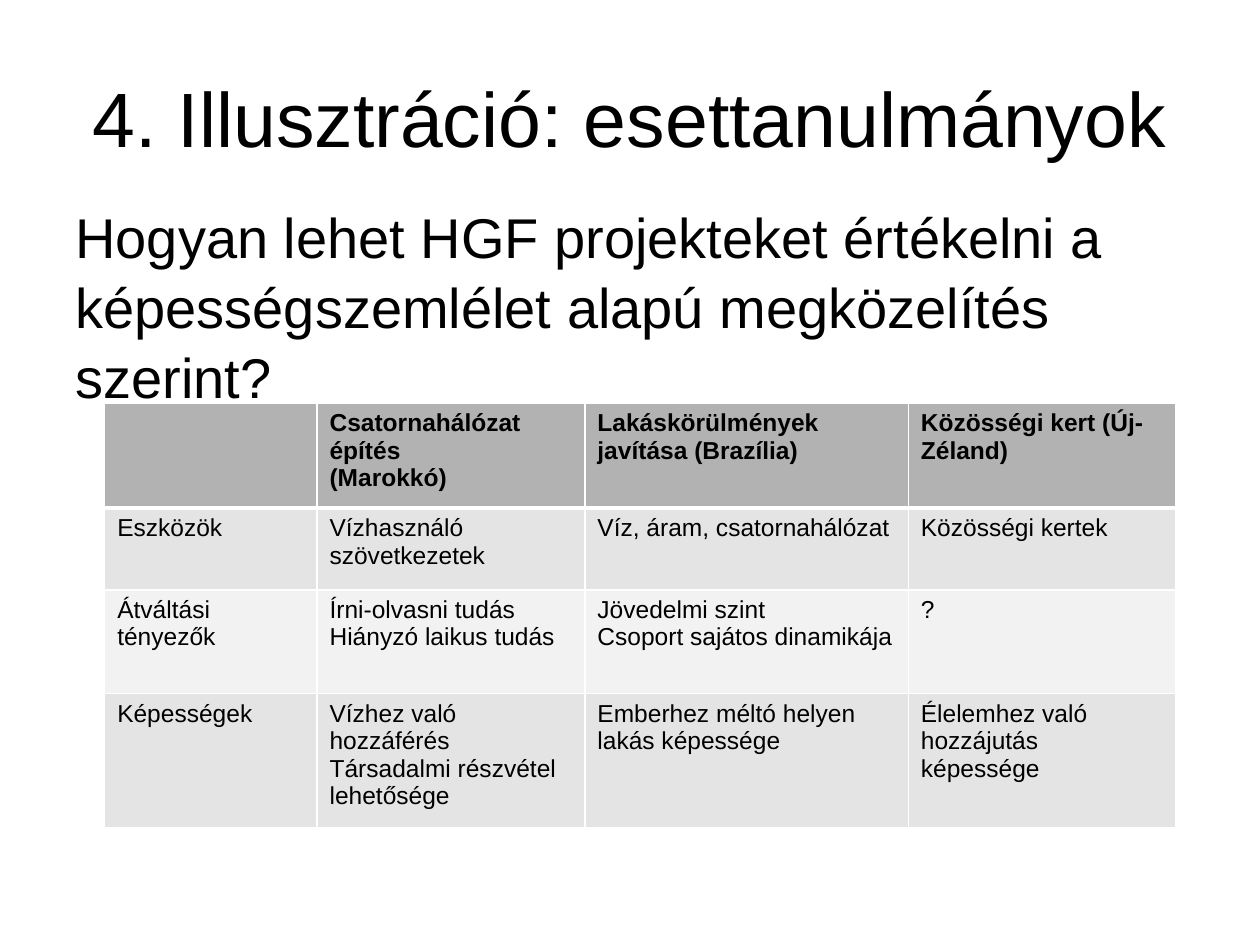
from lxml.etree import SubElement as Sub
from pptx import Presentation
from pptx.dml.color import RGBColor as Rgb
from pptx.enum.text import MSO_ANCHOR as Anchor, PP_ALIGN as Align
from pptx.oxml.ns import qn
from pptx.util import Cm, Pt

TITLE = "4. Illusztráció: esettanulmányok"
LEAD = "Hogyan lehet HGF projekteket értékelni a képességszemlélet alapú megközelítés szerint?"
CASES = [
    ["", "Csatornahálózat építés\n(Marokkó)", "Lakáskörülmények javítása (Brazília)",
     "Közösségi kert (Új-Zéland)"],
    ["Eszközök", "Vízhasználó szövetkezetek", "Víz, áram, csatornahálózat",
     "Közösségi kertek"],
    ["Átváltási tényezők", "Írni-olvasni tudás\nHiányzó laikus tudás",
     "Jövedelmi szint\nCsoport sajátos dinamikája", "?"],
    ["Képességek", "Vízhez való hozzáférés\nTársadalmi részvétel lehetősége",
     "Emberhez méltó helyen lakás képessége", "Élelemhez való hozzájutás képessége"],
]
WIDTHS = [4.28, 5.4, 6.52, 5.4]
HEIGHTS = [2.11, 1.65, 2.09, 2.7]
HUES = {"text": "000000", "head": "B2B2B2", "odd": "E4E4E4", "even": "F2F2F2", "rule": "FFFFFF"}


def write(frame, text, size, bold=False, align=Align.LEFT, pitch=None):
    """Fill a text frame, one paragraph per line."""
    frame.word_wrap = True
    frame.text = text
    for para in frame.paragraphs:
        para.alignment = align
        if pitch:
            para.line_spacing = pitch
        font = para.font
        font.name, font.size, font.bold = "Arial", Pt(size), bold
        font.color.rgb = Rgb.from_string(HUES["text"])


def edge(cell, thick):
    """Draw the four borders of a cell, with widths by side."""
    props = cell._tc.get_or_add_tcPr()
    for spot, side in enumerate("LRTB"):
        line = props.makeelement(qn(f"a:ln{side}"), {"w": str(Pt(thick.get(side, 1)))})
        fill = Sub(line, qn("a:solidFill"))
        Sub(fill, qn("a:srgbClr"), val=HUES["rule"])
        props.insert(spot, line)


def main():
    """Build the slide and save it."""
    deck = Presentation()
    deck.slide_width, deck.slide_height = Cm(25.4), Cm(19.05)
    slide = deck.slides.add_slide(deck.slide_layouts[5])

    title = slide.shapes.title
    title.left, title.top, title.width, title.height = Cm(1.27), Cm(0.76), Cm(22.86), Cm(3.18)
    title.text_frame.vertical_anchor = Anchor.MIDDLE
    write(title.text_frame, TITLE, 44, align=Align.CENTER)

    lead = slide.shapes.add_textbox(Cm(1.27), Cm(3.91), Cm(23.83), Cm(2.69))
    write(lead.text_frame, LEAD, 32, pitch=1.04)

    grid = slide.shapes.add_table(len(CASES), len(WIDTHS), Cm(2.11), Cm(8.13),
                                  Cm(sum(WIDTHS)), Cm(sum(HEIGHTS))).table
    for col, width in zip(grid.columns, WIDTHS):
        col.width = Cm(width)
    for r, (row, high) in enumerate(zip(CASES, HEIGHTS)):
        grid.rows[r].height = Cm(high)
        hue = "odd" if r % 2 else "even" if r else "head"
        for c, text in enumerate(row):
            cell = grid.cell(r, c)
            write(cell.text_frame, text, 14, bold=r == 0)
            cell.fill.solid()
            cell.fill.fore_color.rgb = Rgb.from_string(HUES[hue])
            edge(cell, {"B": 3} if r == 0 else {"T": 3} if r == 1 else {})

    deck.save("out.pptx")


if __name__ == "__main__":
    main()
